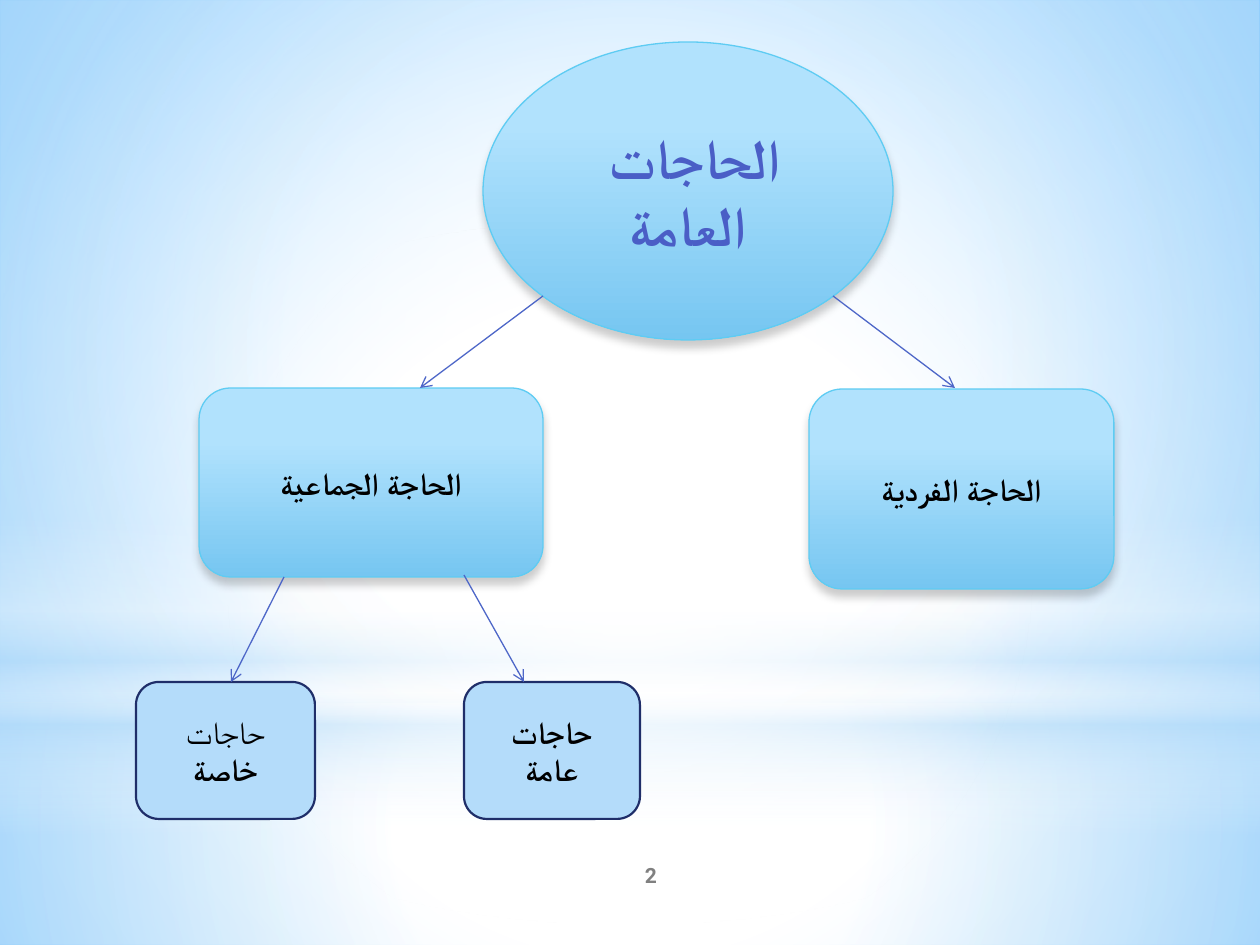
import dataclasses
from typing import Optional

import lxml.etree
import pptx
import pptx.dml.color
import pptx.enum.shapes
import pptx.enum.text
import pptx.oxml.ns
import pptx.util

EMU_PER_PX = 914400 / 126
WIDTH, HEIGHT = 1260, 945
FONT = "Roboto"
PALE_BLUE = "B4DCFA"
KIND = pptx.enum.shapes.MSO_SHAPE
qn = pptx.oxml.ns.qn


@dataclasses.dataclass(frozen=True)
class Gradient:
    """Stops are (position %, colour, opacity %); center insets make it circular."""
    stops: tuple
    center: Optional[tuple] = None


@dataclasses.dataclass(frozen=True)
class Box:
    left: int
    top: int
    width: int
    height: int


@dataclasses.dataclass(frozen=True)
class Layer:
    kind: KIND
    box: Box
    gradient: Gradient


@dataclasses.dataclass(frozen=True)
class Style:
    fill: object
    line: str
    line_width: float
    shadow: bool


@dataclasses.dataclass(frozen=True)
class Node:
    kind: KIND
    box: Box
    style: Style
    runs: tuple  # (text, bold)
    size: int = 18
    color: str = "000000"


@dataclasses.dataclass(frozen=True)
class Arrow:
    start: tuple
    end: tuple


MIDDLE = (50, 50, 50, 50)
BACKGROUND = Gradient(((0, "FFFFFF", 100), (42, "FFFFFF", 100), (100, "63BCFF", 100)),
                      (24, 44, 24, 12))
LAYERS = (
    Layer(KIND.RECTANGLE, Box(0, 703, WIDTH, 242), Gradient(
        ((0, "FFFFFF", 91), (37, "FFFFFF", 76), (100, PALE_BLUE, 79)), MIDDLE)),
    Layer(KIND.RECTANGLE, Box(0, 0, WIDTH, 703), Gradient(
        ((0, "FFFFFF", 89), (48, "FFFFFF", 62), (100, PALE_BLUE, 79)), MIDDLE)),
    Layer(KIND.RECTANGLE, Box(0, 519, WIDTH, 315), Gradient(
        ((0, "FFFFFF", 0), (29, "FFFFFF", 30), (45, PALE_BLUE, 40),
         (55, "FFFFFF", 26), (65, PALE_BLUE, 60), (100, "FFFFFF", 0)))),
    Layer(KIND.OVAL, Box(0, 220, WIDTH, 703), Gradient(
        ((0, "FFFFFF", 100), (56, "FFFFFF", 0)), MIDDLE)),
)

GLOSSY = Style(Gradient(((28, "B1E2FD", 100), (100, "76C6F1", 100))), "5ECCF3", 0.75, True)
FLAT = Style(PALE_BLUE, "1F2E69", 1.25, False)
NODES = (
    Node(KIND.OVAL, Box(483, 42, 410, 298), GLOSSY,
         ((" الحاجات العامة", True),), 32, "4A5EC6"),
    Node(KIND.ROUNDED_RECTANGLE, Box(199, 388, 344, 189), GLOSSY, (("الحاجة الجماعية", True),)),
    Node(KIND.ROUNDED_RECTANGLE, Box(809, 389, 305, 200), GLOSSY, (("الحاجة الفردية", True),)),
    Node(KIND.ROUNDED_RECTANGLE, Box(464, 682, 176, 137), FLAT, (("حاجات عامة", True),)),
    Node(KIND.ROUNDED_RECTANGLE, Box(136, 682, 179, 137), FLAT,
         (("حاجات ", False), ("خاصة", True))),
)
ARROWS = (
    Arrow((543, 296), (420, 388)),
    Arrow((833, 296), (955, 388)),
    Arrow((284, 577), (231, 682)),
    Arrow((464, 575), (524, 682)),
)
PAGE_NUMBER_BOX = Box(525, 850, 252, 50)


def px(length: int) -> int:
    return round(length * EMU_PER_PX)


def emu(box: Box) -> tuple:
    return tuple(px(length) for length in dataclasses.astuple(box))


def rgb(color: str) -> pptx.dml.color.RGBColor:
    return pptx.dml.color.RGBColor.from_string(color)


def add_xml(parent, tag: str, **attributes):
    return lxml.etree.SubElement(
        parent, qn(tag), {name: str(value) for name, value in attributes.items()})


def add_color(parent, color: str, opacity: int) -> None:
    add_xml(add_xml(parent, "a:srgbClr", val=color), "a:alpha", val=opacity * 1000)


def set_gradient(fill, properties, gradient: Gradient) -> None:
    """Put the gradient in the fill's place among the given properties."""
    fill.background()
    empty = properties.find(qn("a:noFill"))
    element = lxml.etree.Element(qn("a:gradFill"), rotWithShape="1")
    stops = add_xml(element, "a:gsLst")
    for position, color, opacity in gradient.stops:
        add_color(add_xml(stops, "a:gs", pos=position * 1000), color, opacity)
    if gradient.center:
        insets = {side: inset * 1000 for side, inset in zip("ltrb", gradient.center)}
        add_xml(add_xml(element, "a:path", path="circle"), "a:fillToRect", **insets)
    else:
        add_xml(element, "a:lin", ang=90 * 60000, scaled=0)
    properties.replace(empty, element)


def add_shape(slide, kind: KIND, box: Box, fill):
    shape = slide.shapes.add_shape(kind, *emu(box))
    shape.shadow.inherit = False
    if isinstance(fill, Gradient):
        set_gradient(shape.fill, shape.element.spPr, fill)
    else:
        shape.fill.solid()
        shape.fill.fore_color.rgb = rgb(fill)
    return shape


def draw_layer(slide, layer: Layer) -> None:
    add_shape(slide, layer.kind, layer.box, layer.gradient).line.fill.background()


def write_text(shape, runs: tuple, size: int, color: str):
    """Write centred runs and return their paragraph."""
    shape.text_frame.word_wrap = True
    shape.text_frame.vertical_anchor = pptx.enum.text.MSO_ANCHOR.MIDDLE
    paragraph = shape.text_frame.paragraphs[0]
    paragraph.alignment = pptx.enum.text.PP_ALIGN.CENTER
    for text, bold in runs:
        run = paragraph.add_run()
        run.text = text
        formats = {"name": FONT, "size": pptx.util.Pt(size), "bold": bold}
        for attribute, value in formats.items():
            setattr(run.font, attribute, value)
        run.font.color.rgb = rgb(color)
        add_xml(run.font._element, "a:cs", typeface=FONT)
    return paragraph


def draw_node(slide, node: Node) -> None:
    shape = add_shape(slide, node.kind, node.box, node.style.fill)
    shape.line.color.rgb = rgb(node.style.line)
    shape.line.width = pptx.util.Pt(node.style.line_width)
    if node.style.shadow:
        shadow = add_xml(shape.element.spPr.find(qn("a:effectLst")), "a:outerShdw",
                         blurRad=pptx.util.Pt(5), dist=pptx.util.Pt(4),
                         dir=90 * 60000, rotWithShape=0)
        add_color(shadow, "000000", 20)
    write_text(shape, node.runs, node.size, node.color)


def draw_arrow(slide, arrow: Arrow) -> None:
    ends = (px(length) for length in arrow.start + arrow.end)
    connector = slide.shapes.add_connector(pptx.enum.shapes.MSO_CONNECTOR.STRAIGHT, *ends)
    connector.line.color.rgb = rgb("4E67C8")
    connector.line.width = pptx.util.Pt(0.75)
    add_xml(connector.line._get_or_add_ln(), "a:tailEnd", type="arrow")
    add_xml(connector.element.spPr, "a:effectLst")


def draw_page_number(slide) -> None:
    number = slide.shapes.add_textbox(*emu(PAGE_NUMBER_BOX))
    paragraph = write_text(number, (("2", True),), 12, "808080")
    paragraph._p.get_or_add_pPr().set("rtl", "1")


def main() -> None:
    deck = pptx.Presentation()
    deck.slide_width, deck.slide_height = px(WIDTH), px(HEIGHT)
    slide = deck.slides.add_slide(deck.slide_layouts[6])
    backdrop = slide.background.fill
    set_gradient(backdrop, slide.element.find(".//" + qn("p:bgPr")), BACKGROUND)
    for layer in LAYERS:
        draw_layer(slide, layer)
    draw_page_number(slide)
    for node in NODES:
        draw_node(slide, node)
    for arrow in ARROWS:
        draw_arrow(slide, arrow)
    deck.save("out.pptx")


if __name__ == "__main__":
    main()
